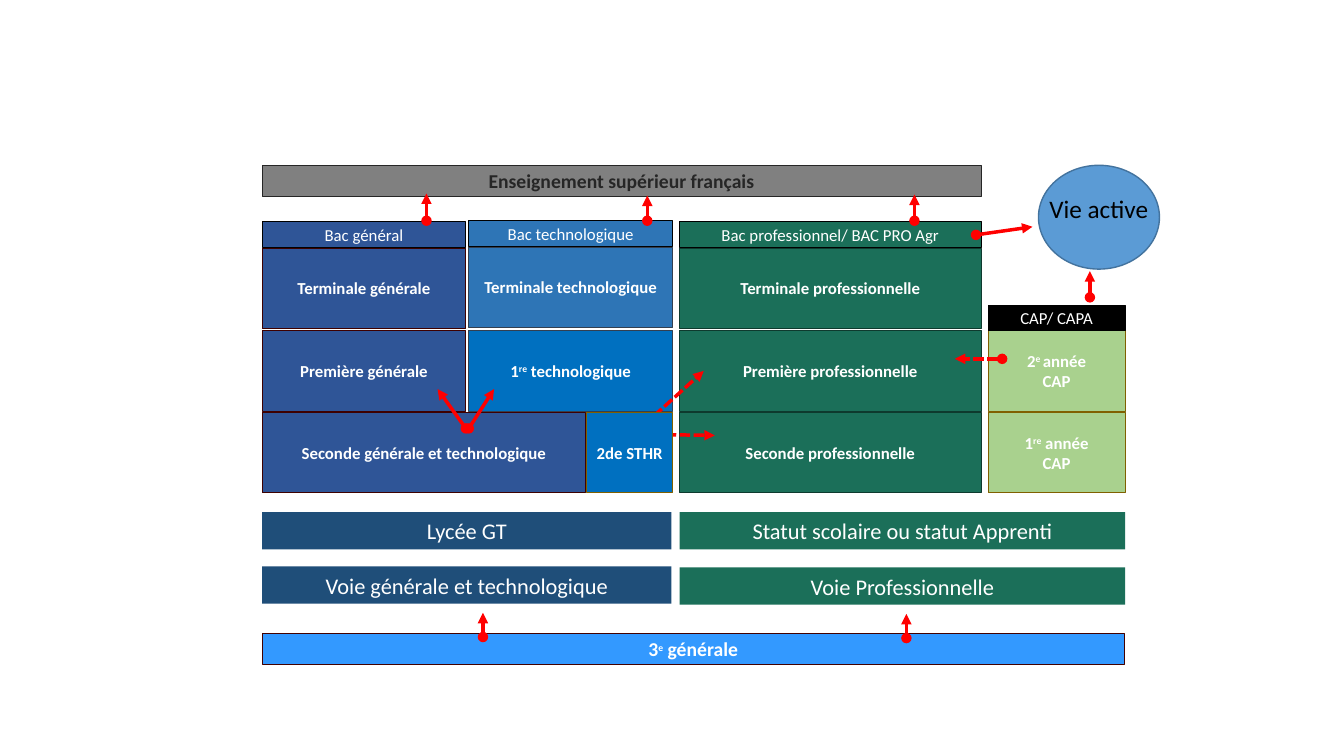
from dataclasses import dataclass

from lxml.etree import SubElement
from pptx import Presentation
from pptx.dml.color import RGBColor as RGB
from pptx.enum.dml import MSO_LINE as Dash
from pptx.enum.shapes import MSO_CONNECTOR as Link, MSO_SHAPE as Kind
from pptx.enum.text import MSO_ANCHOR as Anchor, PP_ALIGN as Align
from pptx.oxml.ns import qn
from pptx.util import Emu, Pt

PX = 9144  # EMU per px, 100 px to the inch


@dataclass(frozen=True)
class Theme:
    font: str = "Calibri"
    small: int = 12
    mid: int = 14
    big: int = 16
    large: int = 18
    thin: float = 0.5
    thick: float = 2.5
    white: str = "FFFFFF"
    black: str = "000000"
    red: str = "FF0000"
    navy: str = "1F4E79"
    blue: str = "2F5597"
    wine: str = "3E0000"
    tech: str = "2E75B6"
    azure: str = "0070C0"
    slate: str = "333F50"
    green: str = "1B6F59"
    pine: str = "0E3A2E"
    lime: str = "A9D18E"
    gold: str = "806000"
    gray: str = "808080"
    dark: str = "262626"
    sky: str = "3399FF"
    maroon: str = "420000"
    disc: str = "5B9BD5"
    rim: str = "43739E"


T = Theme()

# Columns: left and width
GEN, TECH, PRO, CAP = (260, 202), (465, 202), (674, 299), (980, 136)
# School years: top of each row
FINAL, FIRST, SECOND = 246, 328, 409
ROW, CAPTION = 80, 25


def px(*nums):
    return [Emu(n * PX) for n in nums]


def write(frame, text, size, color, bold=False, align=Align.CENTER, sup=None):
    """Lines split at a newline, runs at "|"; a run led by "^" is raised."""
    for i, line in enumerate(text.split("\n")):
        para = frame.paragraphs[0] if i == 0 else frame.add_paragraph()
        para.alignment = align
        for part in line.split("|"):
            run = para.add_run()
            run.text = part.lstrip("^")
            font = run.font
            font.name, font.size, font.bold = T.font, Pt(size), bold
            font.color.rgb = RGB.from_string(color)
            if part.startswith("^"):
                font.size = Pt(sup or size)
                font._element.set("baseline", "30000")


def form(slide, kind, area, fill, edge=None, width=T.thin):
    shape = slide.shapes.add_shape(kind, *px(*area))
    shape.shadow.inherit = False
    shape.fill.solid()
    shape.fill.fore_color.rgb = RGB.from_string(fill)
    if edge:
        shape.line.color.rgb = RGB.from_string(edge)
        shape.line.width = Pt(width)
    else:
        shape.line.fill.background()
    return shape


def box(slide, area, text, fill, edge=None, size=T.small, color=T.white,
        bold=True, sup=None):
    frame = form(slide, Kind.RECTANGLE, area, fill, edge).text_frame
    frame.word_wrap = True
    frame.vertical_anchor = Anchor.MIDDLE
    frame.margin_left = frame.margin_right = 0
    write(frame, text, size, color, bold, sup=sup)


def level(slide, col, top, text, fill, edge):
    left, width = col
    box(slide, (left, top, width, ROW), text, fill, edge)


def caption(slide, col, top, text, fill):
    left, width = col
    box(slide, (left, top, width, CAPTION), text, fill, T.black, bold=False)


def arrow(slide, start, end, dashed=False):
    link = slide.shapes.add_connector(Link.STRAIGHT, *px(*start, *end))
    link.line.color.rgb = RGB.from_string(T.red)
    link.line.width = Pt(T.thick)
    if dashed:
        link.line.dash_style = Dash.SQUARE_DOT
    props = link._element.spPr
    line = props.find(qn("a:ln"))
    SubElement(line, qn("a:headEnd"), type="oval")
    SubElement(line, qn("a:tailEnd"), type="triangle")
    SubElement(props, qn("a:effectLst"))


def main():
    prs = Presentation()
    prs.slide_width, prs.slide_height = px(1333, 750)
    slide = prs.slides.add_slide(prs.slide_layouts[6])

    # Bars at the foot and the top
    box(slide, (260, 628, 855, 31), "3|^e| générale", T.sky, T.maroon,
        T.mid, sup=T.small)
    box(slide, (260, 164, 713, 31), "Enseignement supérieur français",
        T.gray, T.dark, T.mid, T.dark)

    # Banners of the two paths
    for left, top, width, fill, text in (
        (260, 508, 406, T.navy, "Lycée GT"),
        (260, 562, 406, T.navy, "Voie générale et technologique"),
        (674, 508, 442, T.green, "Statut scolaire ou statut Apprenti"),
        (674, 563, 442, T.green, "Voie Professionnelle"),
    ):
        box(slide, (left, top, width, 37), text, fill, size=T.big, bold=False)

    # School years
    for col, top, text, fill, edge in (
        ((260, 321), SECOND, "Seconde générale et technologique", T.blue, T.wine),
        (GEN, FIRST, "Première générale", T.blue, T.wine),
        (GEN, FINAL, "Terminale générale", T.blue, T.wine),
        (TECH, FIRST, "1|^re| technologique", T.azure, T.slate),
        (TECH, FINAL - 1, "Terminale technologique", T.tech, T.slate),
        (PRO, SECOND, "Seconde professionnelle", T.green, T.pine),
        (PRO, FIRST, "Première professionnelle", T.green, T.pine),
        (PRO, FINAL, "Terminale professionnelle", T.green, T.pine),
        (CAP, SECOND, "1|^re| année\nCAP", T.lime, T.gold),
        (CAP, FIRST, "2|^e |année\nCAP", T.lime, T.gold),
    ):
        level(slide, col, top, text, fill, edge)

    # Diplomas
    for col, top, text, fill in (
        (GEN, 220, "Bac général", T.blue),
        (TECH, 219, "Bac technologique", T.tech),
        (PRO, 220, "Bac professionnel/ BAC PRO Agr", T.green),
        (CAP, 303, "CAP/ CAPA", T.black),
    ):
        caption(slide, col, top, text, fill)

    # Working life
    form(slide, Kind.OVAL, (1030, 164, 120, 103), T.disc, T.rim, 1)
    label = slide.shapes.add_textbox(*px(1031, 187, 120, 40)).text_frame
    label.word_wrap = False
    write(label, "Vie active", T.large, T.black, align=Align.LEFT)

    # Usual routes
    for start, end in (
        ((465, 425), (490, 386)),
        ((462, 425), (434, 386)),
        ((423, 219), (423, 192)),
        ((642, 219), (642, 194)),
        ((907, 219), (907, 193)),
        ((1081, 295), (1081, 269)),
        ((968, 233), (1024, 225)),
        ((479, 632), (479, 608)),
        ((899, 633), (899, 609)),
    ):
        arrow(slide, start, end)

    # Bridges between paths
    for start, end in (
        ((635, 425), (698, 368)),
        ((642, 431), (709, 432)),
        ((994, 356), (947, 356)),
    ):
        arrow(slide, start, end, dashed=True)

    # Hotel class, over the start of its bridges
    level(slide, (582, 85), SECOND, "2de STHR", T.azure, T.gold)

    prs.save("out.pptx")


if __name__ == "__main__":
    main()
